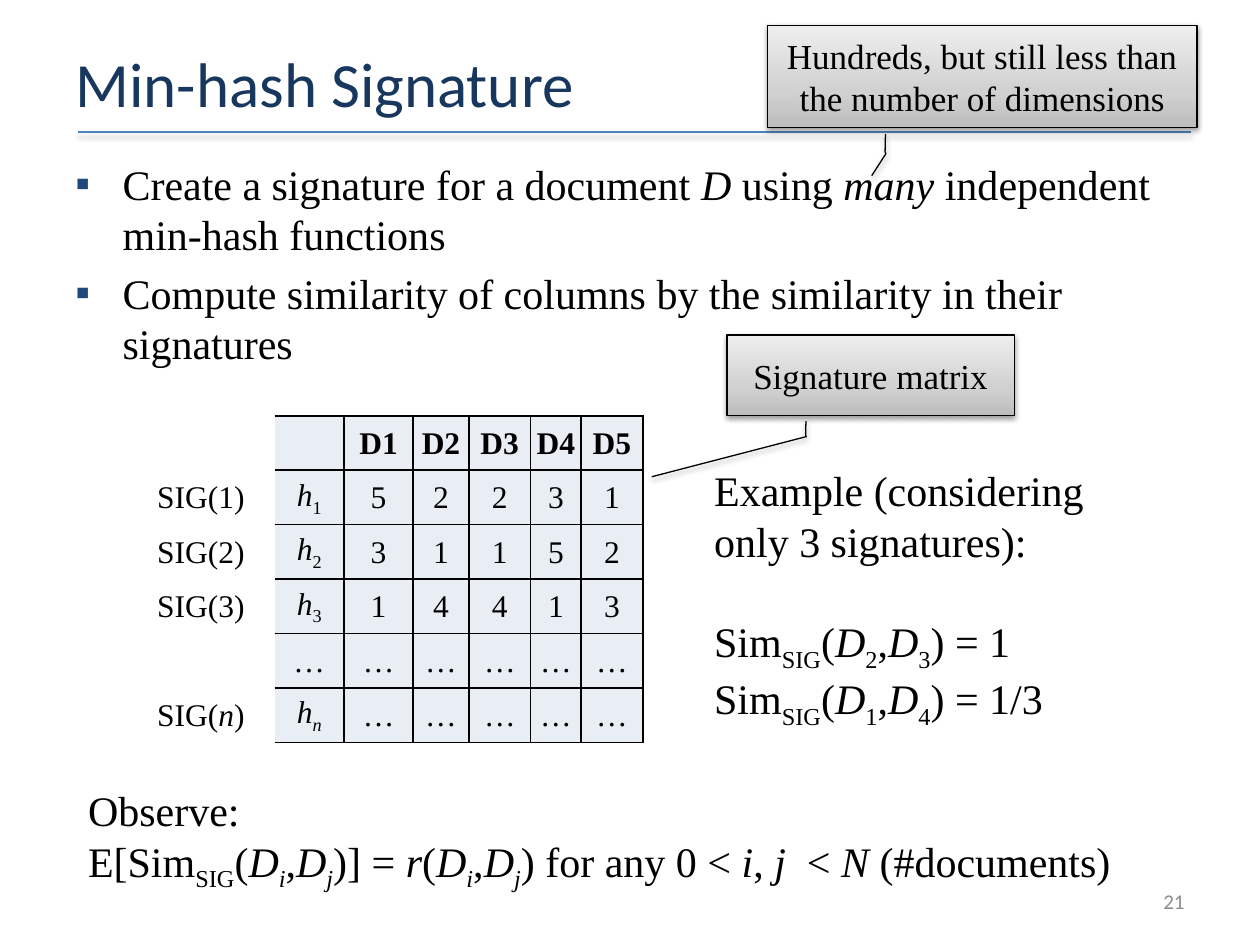
from lxml.etree import SubElement
from pptx import Presentation
from pptx.dml.color import RGBColor
from pptx.enum.shapes import MSO_CONNECTOR, MSO_SHAPE
from pptx.enum.text import MSO_ANCHOR, MSO_AUTO_SIZE, PP_ALIGN
from pptx.oxml.ns import qn
from pptx.util import Pt

COLORS = {
    "title": "17375E",
    "rule": "4F81BD",
    "bullet": "1F497D",
    "text": "000000",
    "number": "8C8C8C",
    "cell": "E9EDF4",
    "dark": "BDBDBD",
    "middle": "D1D1D1",
    "light": "EEEEEE",
}
SERIF, SANS = "Times New Roman", "Calibri"
PLAIN_TABLE = "{2D5ABB26-0587-4C30-8999-92F81FD0307C}"


def color(name):
    return RGBColor.from_string(COLORS[name])


def add_element(parent, tag, **attributes):
    return SubElement(parent, qn(tag), {key: str(value) for key, value in attributes.items()})


class SlideBuilder:
    def __init__(self, slide, font=SERIF, size=24):
        self.slide, self.font, self.size = slide, font, size

    def add_runs(self, paragraph, markup, size=None, font=None, fill="text", bold=False):
        """Fill a paragraph; *...* is italic and _..._ is subscript."""
        for i, part in enumerate(markup.split("*")):
            for j, piece in enumerate(part.split("_")):
                if not piece:
                    continue
                run = paragraph.add_run()
                run.text = piece
                run.font.name = font or self.font
                run.font.size = Pt(size or self.size)
                run.font.color.rgb = color(fill)
                run.font.bold = bold
                run.font.italic = i % 2 == 1
                if j % 2:
                    run.font._element.set("baseline", "-25000")

    def shadow(self, shape):
        effects = add_element(shape._element.spPr, "a:effectLst")
        outer = add_element(effects, "a:outerShdw", blurRad=Pt(3.1), dist=Pt(1.6),
                            dir=5400000, rotWithShape=0)
        black = add_element(outer, "a:srgbClr", val=COLORS["text"])
        add_element(black, "a:alpha", val=38000)

    def title(self, text, left, top, width, height):
        title = self.slide.shapes.title
        title.left, title.top, title.width, title.height = map(Pt, (left, top, width, height))
        frame = title.text_frame
        frame.auto_size = MSO_AUTO_SIZE.NONE
        frame.vertical_anchor = MSO_ANCHOR.MIDDLE
        frame.paragraphs[0].alignment = PP_ALIGN.LEFT
        self.add_runs(frame.paragraphs[0], text, 36, SANS, "title")

    def rule(self, left, right, y):
        line = self.slide.shapes.add_connector(
            MSO_CONNECTOR.STRAIGHT, Pt(left), Pt(y), Pt(right), Pt(y))
        line.line.color.rgb = color("rule")
        line.line.width = Pt(1)
        self.shadow(line)

    def text(self, lines, left, top, width, height, align=PP_ALIGN.LEFT,
             anchor=MSO_ANCHOR.TOP, **style):
        box = self.slide.shapes.add_textbox(Pt(left), Pt(top), Pt(width), Pt(height))
        frame = box.text_frame
        frame.word_wrap = True
        frame.vertical_anchor = anchor
        for index, line in enumerate(lines):
            paragraph = frame.add_paragraph() if index else frame.paragraphs[0]
            paragraph.alignment = align
            self.add_runs(paragraph, line, **style)
        return frame.paragraphs

    def bullets(self, lines, left, top, width, height):
        for paragraph in self.text(lines, left, top, width, height):
            paragraph.space_before = Pt(4.8)
            properties = paragraph._p.get_or_add_pPr()
            properties.set("marL", str(Pt(27)))
            properties.set("indent", str(Pt(-27)))
            bullet_color = add_element(properties, "a:buClr")
            add_element(bullet_color, "a:srgbClr", val=COLORS["bullet"])
            add_element(properties, "a:buFont", typeface=self.font)
            add_element(properties, "a:buChar", char="▪")

    def callout(self, text, left, top, width, height, tip_y, tip_x):
        shape = self.slide.shapes.add_shape(
            MSO_SHAPE.LINE_CALLOUT_3, Pt(left), Pt(top), Pt(width), Pt(height))
        leader = (1.066, 0.275, 1.241, 0.274, 1.259, 0.276, tip_y, tip_x)
        for index, value in enumerate(leader):
            shape.adjustments[index] = value
        shape.fill.gradient()
        shape.fill.gradient_angle = 90
        stops = shape._element.spPr.find(qn("a:gradFill")).find(qn("a:gsLst"))
        for stop in list(stops):
            stops.remove(stop)
        for position, name in ((0, "dark"), (35, "middle"), (100, "light")):
            stop = add_element(stops, "a:gs", pos=position * 1000)
            add_element(stop, "a:srgbClr", val=COLORS[name])
        shape.line.color.rgb = color("text")
        shape.line.width = Pt(0.75)
        self.shadow(shape)
        frame = shape.text_frame
        frame.word_wrap = True
        frame.vertical_anchor = MSO_ANCHOR.MIDDLE
        frame.paragraphs[0].alignment = PP_ALIGN.CENTER
        self.add_runs(frame.paragraphs[0], text, 20)

    def borders(self, cell, sides):
        properties = cell._tc.get_or_add_tcPr()
        for index, side in enumerate(sides):
            line = add_element(properties, f"a:ln{side}", w=Pt(1))
            fill = add_element(line, "a:solidFill")
            add_element(fill, "a:srgbClr", val=COLORS["text"])
            properties.insert(index, line)

    def table(self, rows, left, top, widths, row_height):
        table_shape = self.slide.shapes.add_table(
            len(rows), len(widths), Pt(left), Pt(top), Pt(sum(widths)),
            Pt(row_height * len(rows)))
        table = table_shape.table
        table.first_row = table.horz_banding = False
        table._tbl.tblPr.find(qn("a:tableStyleId")).text = PLAIN_TABLE
        for column, width in zip(table.columns, widths):
            column.width = Pt(width)
        for r, row in enumerate(rows):
            table.rows[r].height = Pt(row_height)
            for c, text in enumerate(row):
                cell = table.cell(r, c)
                cell.margin_left = cell.margin_right = cell.margin_top = Pt(0.72)
                cell.margin_bottom = 0
                cell.vertical_anchor = MSO_ANCHOR.MIDDLE
                paragraph = cell.text_frame.paragraphs[0]
                paragraph.alignment = PP_ALIGN.CENTER
                self.add_runs(paragraph, text, 18, bold=r == 0)
                # The row labels in the first column stand outside the grid
                if c == 0:
                    cell.fill.background()
                    continue
                cell.fill.solid()
                cell.fill.fore_color.rgb = color("cell")
                self.borders(cell, "RTB" if c == 1 else "LRTB")


def main():
    presentation = Presentation()
    presentation.slide_width, presentation.slide_height = Pt(720), Pt(540)
    builder = SlideBuilder(presentation.slides.add_slide(presentation.slide_layouts[5]))

    # Heading and main points
    builder.title("Min-hash Signature", 36, 21.6, 648, 51)
    builder.rule(44.6, 680.4, 75.6)
    builder.bullets([
        "Create a signature for a document *D *using *many *independent min-hash functions",
        "Compute similarity of columns by the similarity in their signatures",
    ], 36, 87, 648, 163.4)
    builder.text(["21"], 516.2, 500.4, 167.8, 28.8, PP_ALIGN.RIGHT, MSO_ANCHOR.MIDDLE,
                 size=12, font=SANS, fill="number")

    # Signature matrix
    builder.table([
        ["", "", "D1", "D2", "D3", "D4", "D5"],
        ["SIG(1)", "*h*_1_", *"52231"],
        ["SIG(2)", "*h*_2_", *"31152"],
        ["SIG(3)", "*h*_3_", *"14413"],
        ["", "…", *"……………"],
        ["SIG(*n*)", "*h_n_*", *"……………"],
    ], 72.7, 237.6, [84.2, 39.6, 39.6, 31.8, 35.4, 28.8, 35.3], 31.1)

    # Worked example
    example = builder.text([
        "Example (considering only 3 signatures):",
        "Sim_SIG_(*D*_2_,*D*_3_) = 1",
        "Sim_SIG_(*D*_1_,*D*_4_) = 1/3",
    ], 401, 262.1, 250.6, 152.6)
    example[1].space_before = Pt(28.5)

    # Conclusion
    builder.text([
        "Observe:",
        "E[Sim_SIG_(*D_i_*,*D_j_*)] = *r*(*D_i_*,*D_j_*) for any 0 < *i*, *j * < *N *(#documents)",
    ], 43.2, 445, 608.4, 65.5)

    # Callouts
    builder.callout("Hundreds, but still less than the number of dimensions",
                    438.5, 14.4, 245.5, 58.3, 1.475, 0.243)
    builder.callout("Signature matrix", 415.4, 191.5, 164.2, 46.1, 1.757, -0.262)

    presentation.save("out.pptx")


if __name__ == "__main__":
    main()
